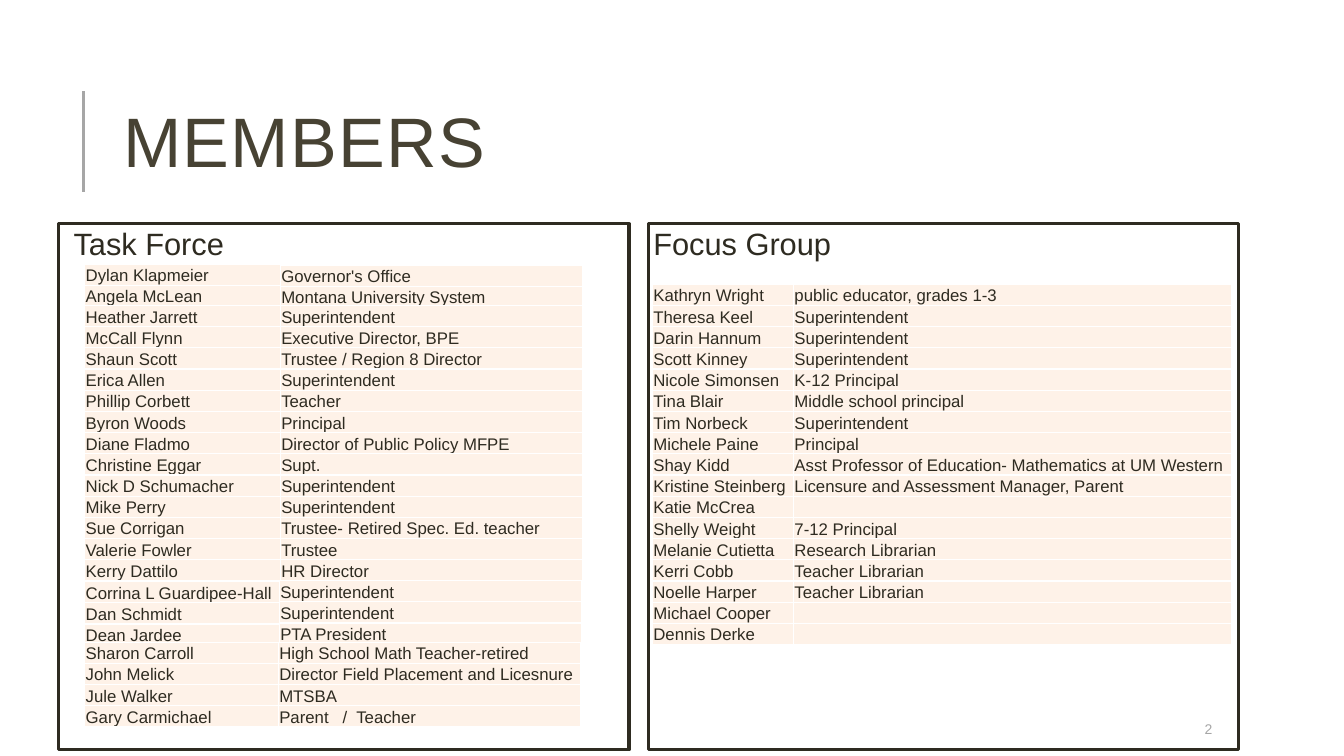
import pptx
import pptx.dml.color
import pptx.enum.shapes
import pptx.enum.text
import pptx.oxml
import pptx.oxml.ns
import pptx.util
from dataclasses import dataclass
from lxml import etree
from pptx.util import Inches

TITLE = "MEMBERS"
PAGE_NUMBER = "2"

# heading, left, width, hanging indent
FRAMES = [
    ("Task Force", 0.58, 5.66, 0.1),
    ("Focus Group", 6.43, 5.85, 0),
]

OPENING = [
    ("Dylan Klapmeier", "Governor's Office"),
    ("Angela McLean", "Montana University System"),
]
MAIN = [
    ("Heather Jarrett", "Superintendent"),
    ("McCall Flynn", "Executive Director, BPE"),
    ("Shaun Scott", "Trustee / Region 8 Director"),
    ("Erica Allen", "Superintendent"),
    ("Phillip Corbett", "Teacher"),
    ("Byron Woods", "Principal"),
    ("Diane Fladmo", "Director of Public Policy MFPE"),
    ("Christine Eggar", "Supt."),
    ("Nick D Schumacher", "Superintendent"),
    ("Mike Perry", "Superintendent"),
    ("Sue Corrigan", "Trustee- Retired Spec. Ed. teacher"),
    ("Valerie Fowler", "Trustee"),
    ("Kerry Dattilo", "HR Director"),
]
ADDED = [
    ("Corrina L Guardipee-Hall", "Superintendent"),
    ("Dan Schmidt", "Superintendent"),
    ("Dean Jardee", "PTA President"),
]
CLOSING = [
    ("Sharon Carroll", "High School Math Teacher-retired"),
    ("John Melick", "Director Field Placement and Licesnure"),
    ("Jule Walker", "MTSBA"),
    ("Gary Carmichael", "Parent   /  Teacher"),
]
FOCUS_GROUP = [
    ("Kathryn Wright", "public educator, grades 1-3"),
    ("Theresa Keel", "Superintendent"),
    ("Darin Hannum", "Superintendent"),
    ("Scott Kinney", "Superintendent"),
    ("Nicole Simonsen", "K-12 Principal"),
    ("Tina Blair", "Middle school principal"),
    ("Tim Norbeck", "Superintendent"),
    ("Michele Paine", "Principal"),
    ("Shay Kidd", "Asst Professor of Education- Mathematics at UM Western"),
    ("Kristine Steinberg", "Licensure and Assessment Manager, Parent"),
    ("Katie McCrea", ""),
    ("Shelly Weight", "7-12 Principal"),
    ("Melanie Cutietta", "Research Librarian"),
    ("Kerri Cobb", "Teacher Librarian"),
    ("Noelle Harper", "Teacher Librarian"),
    ("Michael Cooper", ""),
    ("Dennis Derke", ""),
]
# members, then (left, top, width) of the names and of the roles
ROSTERS = [
    (OPENING, (0.84, 2.62, 1.94), (2.78, 2.63, 3)),
    (MAIN, (0.84, 3.03, 1.94), (2.78, 3.03, 3)),
    (ADDED, (0.84, 5.77, 1.94), (2.77, 5.76, 3)),
    (CLOSING, (0.84, 6.37, 1.94), (2.76, 6.37, 3)),
    (FOCUS_GROUP, (6.47, 2.82, 1.4), (7.87, 2.82, 4.35)),
]
ROW_HEIGHT = 0.21


@dataclass(frozen=True)
class Theme:
    font: str = "Arial"
    title: str = "474233"
    ink: str = "2E2B21"
    muted: str = "A6A6A6"
    cell: str = "FEF2E8"
    border: str = "FFFFFF"
    title_size: int = 50
    heading_size: int = 22
    cell_size: int = 12
    number_size: int = 10


THEME = Theme()
ANCHOR = pptx.enum.text.MSO_ANCHOR


def rgb(value):
    return pptx.dml.color.RGBColor.from_string(value)


def write(paragraph, text, size, color):
    paragraph.text = text
    paragraph.alignment = pptx.enum.text.PP_ALIGN.LEFT
    for run in paragraph.runs:
        run.font.name = THEME.font
        run.font.size = pptx.util.Pt(size)
        run.font.color.rgb = rgb(color)


def add_title(slide):
    title = slide.shapes.title
    title.left, title.top = Inches(1.12), Inches(0.64)
    title.width, title.height = Inches(10.63), Inches(1.64)
    title.text_frame.vertical_anchor = ANCHOR.MIDDLE
    paragraph = title.text_frame.paragraphs[0]
    write(paragraph, TITLE, THEME.title_size, THEME.title)
    paragraph.line_spacing = 0.8
    paragraph.runs[0].font._element.set("spc", "100")

    rule = slide.shapes.add_connector(
        pptx.enum.shapes.MSO_CONNECTOR.STRAIGHT,
        Inches(0.83), Inches(1.9), Inches(0.83), Inches(0.9))
    rule.line.color.rgb = rgb(THEME.muted)
    rule.line.width = pptx.util.Pt(1.75)
    etree.SubElement(rule._element.spPr, pptx.oxml.ns.qn("a:effectLst"))


def add_frame(slide, heading, left, width, indent):
    frame = slide.shapes.add_shape(
        pptx.enum.shapes.MSO_SHAPE.RECTANGLE,
        Inches(left), Inches(2.22), Inches(width), Inches(5.22))
    frame.shadow.inherit = False
    frame.fill.background()
    frame.line.color.rgb = rgb(THEME.ink)
    frame.line.width = pptx.util.Pt(2.25)
    text = frame.text_frame
    text.word_wrap = True
    text.vertical_anchor = ANCHOR.TOP
    text.margin_left = text.margin_right = Inches(0.05)
    text.margin_top = text.margin_bottom = Inches(0.05)
    paragraph = text.paragraphs[0]
    write(paragraph, heading, THEME.heading_size, THEME.ink)
    paragraph.line_spacing = 0.9
    paragraph.space_after = pptx.util.Pt(2)
    paragraph._p.get_or_add_pPr().set("marL", str(Inches(indent)))


def format_cell(cell, text):
    cell.margin_left = cell.margin_right = cell.margin_top = Inches(0.01)
    cell.margin_bottom = 0
    cell.vertical_anchor = ANCHOR.BOTTOM
    paragraph = cell.text_frame.paragraphs[0]
    write(paragraph, text, THEME.cell_size, THEME.ink)
    if not text:  # keeps an empty row as low as the others
        end = etree.SubElement(paragraph._p, pptx.oxml.ns.qn("a:endParaRPr"))
        end.set("sz", str(THEME.cell_size * 100))
    properties = cell._tc.get_or_add_tcPr()
    for side in ("lnL", "lnR", "lnT", "lnB"):
        properties.append(pptx.oxml.parse_xml(
            f'<a:{side} {pptx.oxml.ns.nsdecls("a")} w="12700"><a:solidFill>'
            f'<a:srgbClr val="{THEME.border}"/></a:solidFill></a:{side}>'))
    cell.fill.solid()
    cell.fill.fore_color.rgb = rgb(THEME.cell)


def add_column(slide, entries, left, top, width):
    table = slide.shapes.add_table(
        len(entries), 1, Inches(left), Inches(top), Inches(width),
        Inches(ROW_HEIGHT * len(entries))).table
    table.first_row = table.horz_banding = False
    for index, entry in enumerate(entries):
        table.rows[index].height = Inches(ROW_HEIGHT)
        format_cell(table.cell(index, 0), entry)


def add_page_number(slide):
    number = slide.shapes.add_textbox(
        Inches(11.85), Inches(7.08), Inches(1.06), Inches(0.3)).text_frame
    number.word_wrap = True
    number.vertical_anchor = ANCHOR.MIDDLE
    write(number.paragraphs[0], PAGE_NUMBER, THEME.number_size, THEME.muted)


def main():
    deck = pptx.Presentation()
    deck.slide_width, deck.slide_height = Inches(13.33), Inches(7.5)
    slide = deck.slides.add_slide(deck.slide_layouts[5])
    add_title(slide)
    for frame in FRAMES:
        add_frame(slide, *frame)
    add_page_number(slide)
    for members, *places in ROSTERS:
        for entries, place in zip(zip(*members), places):
            add_column(slide, entries, *place)
    deck.save("out.pptx")


if __name__ == "__main__":
    main()
